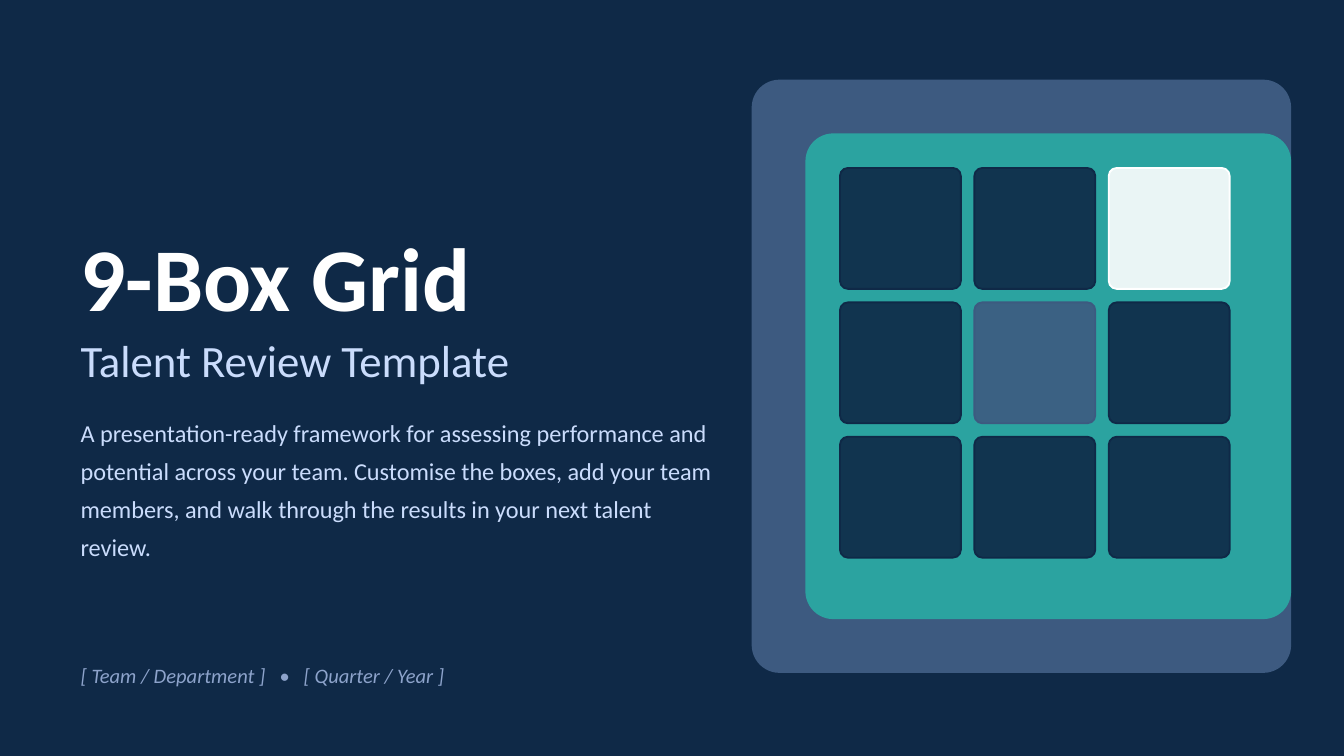
from lxml.etree import SubElement
from pptx import Presentation
from pptx.dml.color import RGBColor
from pptx.enum.shapes import MSO_SHAPE
from pptx.enum.text import MSO_ANCHOR
from pptx.oxml.ns import qn
from pptx.util import Inches, Pt

COLORS = {
    "navy": "0F2947",
    "slate": "3D5A80",
    "teal": "2BA3A0",
    "white": "FFFFFF",
    "ice": "CADCFC",
    "muted": "8DA3CB",
}


def add_panel(slide, left, top, width, height, radius, color, opacity=100):
    panel = slide.shapes.add_shape(
        MSO_SHAPE.ROUNDED_RECTANGLE,
        Inches(left), Inches(top), Inches(width), Inches(height),
    )
    panel.adjustments[0] = radius / min(width, height)
    panel.shadow.inherit = False
    panel.fill.solid()
    panel.fill.fore_color.rgb = RGBColor.from_string(COLORS[color])
    panel.line.color.rgb = RGBColor.from_string(COLORS[color])
    panel.line.width = Pt(1)
    if opacity < 100:
        fill_color = panel._element.spPr.find(qn("a:solidFill"))[0]
        SubElement(fill_color, qn("a:alpha"), val=str(opacity * 1000))


def add_text(slide, top, width, height, text, size, color, tabs=()):
    box = slide.shapes.add_textbox(Inches(0.6), Inches(top), Inches(width), Inches(height))
    frame = box.text_frame
    frame.word_wrap = True
    frame.vertical_anchor = MSO_ANCHOR.MIDDLE
    frame.margin_left = frame.margin_right = frame.margin_top = frame.margin_bottom = 0
    paragraph = frame.paragraphs[0]
    paragraph.text = text
    if tabs:
        tab_list = SubElement(paragraph._p.get_or_add_pPr(), qn("a:tabLst"))
        for position in tabs:
            SubElement(tab_list, qn("a:tab"), pos=str(Inches(position)), algn="l")
    paragraph.font.name = "Calibri"
    paragraph.font.size = Pt(size)
    paragraph.font.color.rgb = RGBColor.from_string(COLORS[color])
    return frame


deck = Presentation()
deck.slide_width = Inches(10)
deck.slide_height = Inches(10) * 9 // 16
slide = deck.slides.add_slide(deck.slide_layouts[6])
slide.background.fill.solid()
slide.background.fill.fore_color.rgb = RGBColor.from_string(COLORS["navy"])

add_panel(slide, 5.6, 0.6, 4, 4.4, 0.2, "slate")
add_panel(slide, 6, 1, 3.6, 3.6, 0.2, "teal")

accent_cells = {(0, 2): "white", (1, 1): "slate"}
for row in range(3):
    for column in range(3):
        color = accent_cells.get((row, column), "navy")
        add_panel(slide, 6.25 + column, 1.25 + row, 0.9, 0.9, 0.06, color, 90)

title = add_text(slide, 1.6, 5.2, 0.9, "9-Box Grid", 48, "white")
title.paragraphs[0].font.bold = True

add_text(slide, 2.4, 5.2, 0.55, "Talent Review Template", 24, "ice")

summary = add_text(
    slide, 3.05, 4.8, 1.3,
    "A presentation-ready framework for assessing performance and potential "
    "across your team. Customise the boxes, add your team members, and walk "
    "through the results in your next talent review.",
    13, "ice",
)
summary.vertical_anchor = MSO_ANCHOR.TOP
summary.paragraphs[0].line_spacing = 1.3

footer = add_text(
    slide, 4.85, 5.5, 0.35,
    "[ Team / Department ]\t•\t[ Quarter / Year ]", 11, "muted", (1.48, 1.66),
)
footer.paragraphs[0].font.italic = True

deck.save("out.pptx")
